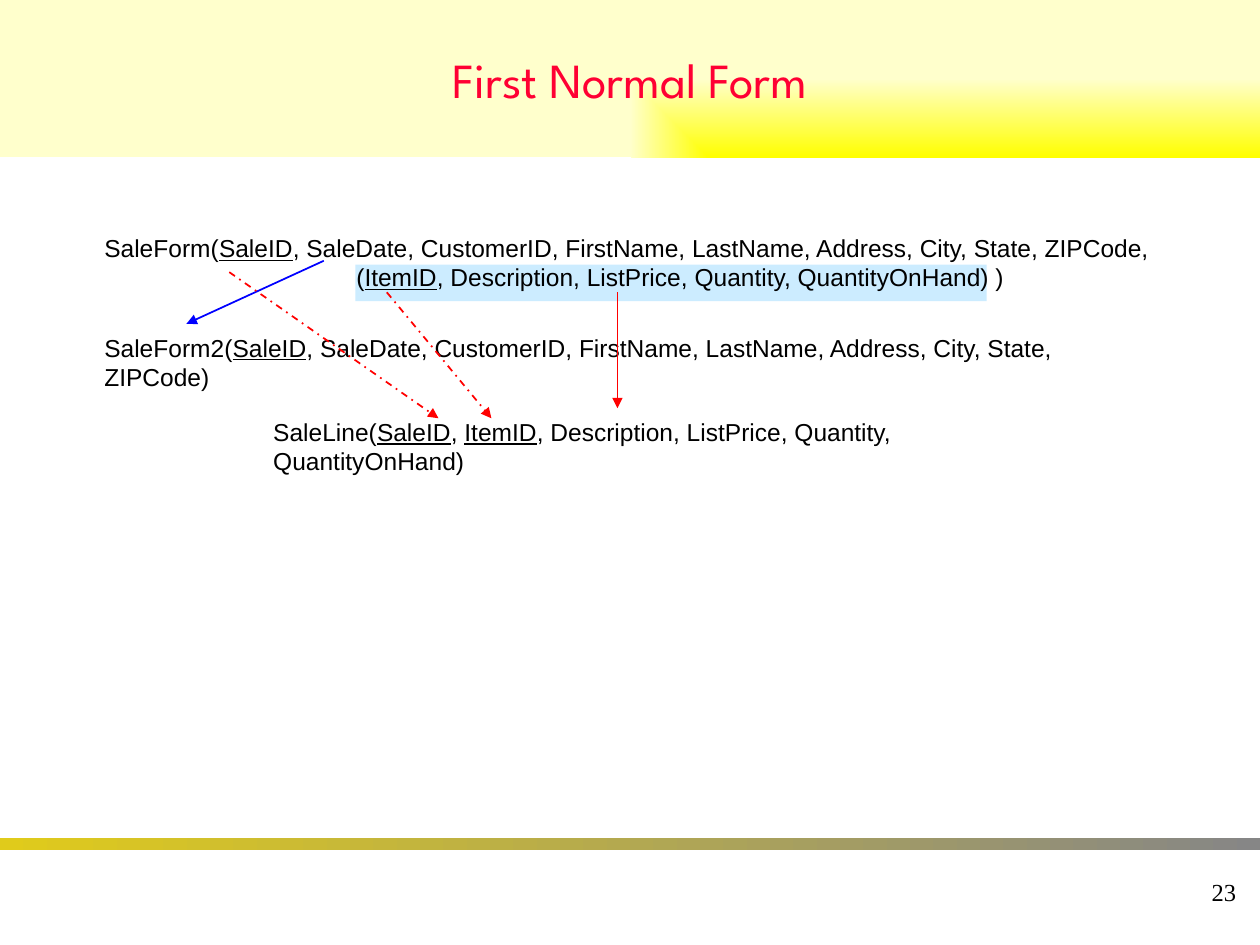
from lxml import etree
from pptx import Presentation
from pptx import util as u
from pptx.dml.color import RGBColor
from pptx.enum import dml, shapes, text
from pptx.oxml.ns import qn

# The slide is a grid of 100 columns by 75 rows
WIDTH, HEIGHT = u.Inches(10), u.Inches(7.5)
COLUMNS, ROWS = 100, 75

RED_TITLE = RGBColor(0xFF, 0x00, 0x33)
RED = RGBColor(0xFF, 0x00, 0x00)
BLUE = RGBColor(0x00, 0x00, 0xFF)
BLACK = RGBColor(0x00, 0x00, 0x00)
YELLOW = RGBColor(0xFF, 0xFF, 0x00)
CREAM = RGBColor(0xFF, 0xFF, 0xCC)
GOLD = RGBColor(0xE0, 0xCB, 0x1B)
GREY = RGBColor(0x86, 0x86, 0x86)
PALE_BLUE = RGBColor(0xCC, 0xEC, 0xFF)


def place(column, row):
    return round(WIDTH * column / COLUMNS), round(HEIGHT * row / ROWS)


def write(paragraph, words, font="Arial", size=14, color=BLACK,
          align=text.PP_ALIGN.LEFT, indent=0):
    """Write words into a paragraph; a part between underscores is underlined."""
    paragraph.alignment = align
    if indent:
        properties = paragraph._p.get_or_add_pPr()
        properties.set("marL", str(place(indent, 0)[0]))
        properties.set("indent", "0")
    for number, part in enumerate(words.split("_")):
        run = paragraph.add_run()
        run.text = part
        run.font.name, run.font.size = font, u.Pt(size)
        run.font.color.rgb = color
        run.font.underline = number % 2 == 1


def add_text(slide, column, row, columns, rows, anchor=text.MSO_ANCHOR.TOP):
    box = slide.shapes.add_textbox(*place(column, row), *place(columns, rows))
    frame = box.text_frame
    frame.word_wrap = True
    frame.vertical_anchor = anchor
    return frame


def add_bar(slide, column, row, columns, rows):
    bar = slide.shapes.add_shape(shapes.MSO_SHAPE.RECTANGLE,
                                 *place(column, row), *place(columns, rows))
    bar.shadow.inherit = False
    bar.line.fill.background()
    return bar


def fill_gradient(shape, start, end, from_corner=False):
    shape.fill.gradient()
    shape.fill.gradient_angle = 0
    for stop, color in zip(shape.fill.gradient_stops, (start, end)):
        stop.color.rgb = color
    if from_corner:  # spread from the bottom right corner
        linear = next(shape._element.iter(qn("a:lin")))
        gradient = linear.getparent()
        gradient.remove(linear)
        spread = etree.SubElement(gradient, qn("a:path"), path="rect")
        etree.SubElement(spread, qn("a:fillToRect"), l="100000", t="100000")


def add_arrow(slide, start, end, color, dashed=False):
    arrow = slide.shapes.add_connector(shapes.MSO_CONNECTOR.STRAIGHT,
                                       *place(*start), *place(*end))
    arrow.line.color.rgb = color
    arrow.line.width = u.Pt(1)
    if dashed:
        arrow.line.dash_style = dml.MSO_LINE.DASH_DOT
    etree.SubElement(arrow.line._get_or_add_ln(), qn("a:tailEnd"), type="triangle")
    etree.SubElement(arrow._element.spPr, qn("a:effectLst"))


def add_title(slide, words):
    title = slide.shapes.title
    title.left, title.top = place(0, 0)
    title.width, title.height = place(COLUMNS, 12.5)
    fill_gradient(title, YELLOW, CREAM, from_corner=True)
    title.text_frame.vertical_anchor = text.MSO_ANCHOR.MIDDLE
    write(title.text_frame.paragraphs[0], words, font="League Spartan", size=28,
          color=RED_TITLE, align=text.PP_ALIGN.CENTER)


def main():
    presentation = Presentation()
    presentation.slide_width, presentation.slide_height = WIDTH, HEIGHT
    slide = presentation.slides.add_slide(presentation.slide_layouts[5])

    # Title, footer bar and slide number
    add_title(slide, "First Normal Form")
    fill_gradient(add_bar(slide, 0, 66.5, COLUMNS, 1), GOLD, GREY)
    number = add_text(slide, 78.3, 68.3, 20.8, 5, text.MSO_ANCHOR.MIDDLE)
    write(number.paragraphs[0], "23", font="Times New Roman",
          align=text.PP_ALIGN.RIGHT)

    # Source relation with its repeating group highlighted
    highlight = add_bar(slide, 28.2, 21, 50.1, 2.9)
    highlight.fill.solid()
    highlight.fill.fore_color.rgb = PALE_BLUE
    form = add_text(slide, 7.3, 18, 85.4, 5.7)
    write(form.paragraphs[0], "SaleForm(_SaleID_, SaleDate, CustomerID, FirstName, "
          "LastName, Address, City, State, ZIPCode,")
    write(form.add_paragraph(), "(_ItemID_, Description, ListPrice, Quantity, "
          "QuantityOnHand) )", indent=20)

    # Relations after the split
    form2 = add_text(slide, 7.3, 25.9, 85, 5.7)
    write(form2.paragraphs[0], "SaleForm2(_SaleID_, SaleDate, CustomerID, FirstName, "
          "LastName, Address, City, State, ZIPCode)")
    line = add_text(slide, 20.7, 32.6, 66, 5.7)
    write(line.paragraphs[0], "SaleLine(_SaleID_, _ItemID_, Description, ListPrice, "
          "Quantity, QuantityOnHand)")

    # Arrows from the old attributes to the new relations
    add_arrow(slide, (49, 23.2), (49, 32.4), RED)
    add_arrow(slide, (25.7, 20.7), (14.8, 25.7), BLUE)
    add_arrow(slide, (18.2, 21.6), (34.8, 33.2), RED, dashed=True)
    add_arrow(slide, (30.7, 23.2), (39, 33.2), RED, dashed=True)

    presentation.save("out.pptx")


if __name__ == "__main__":
    main()
